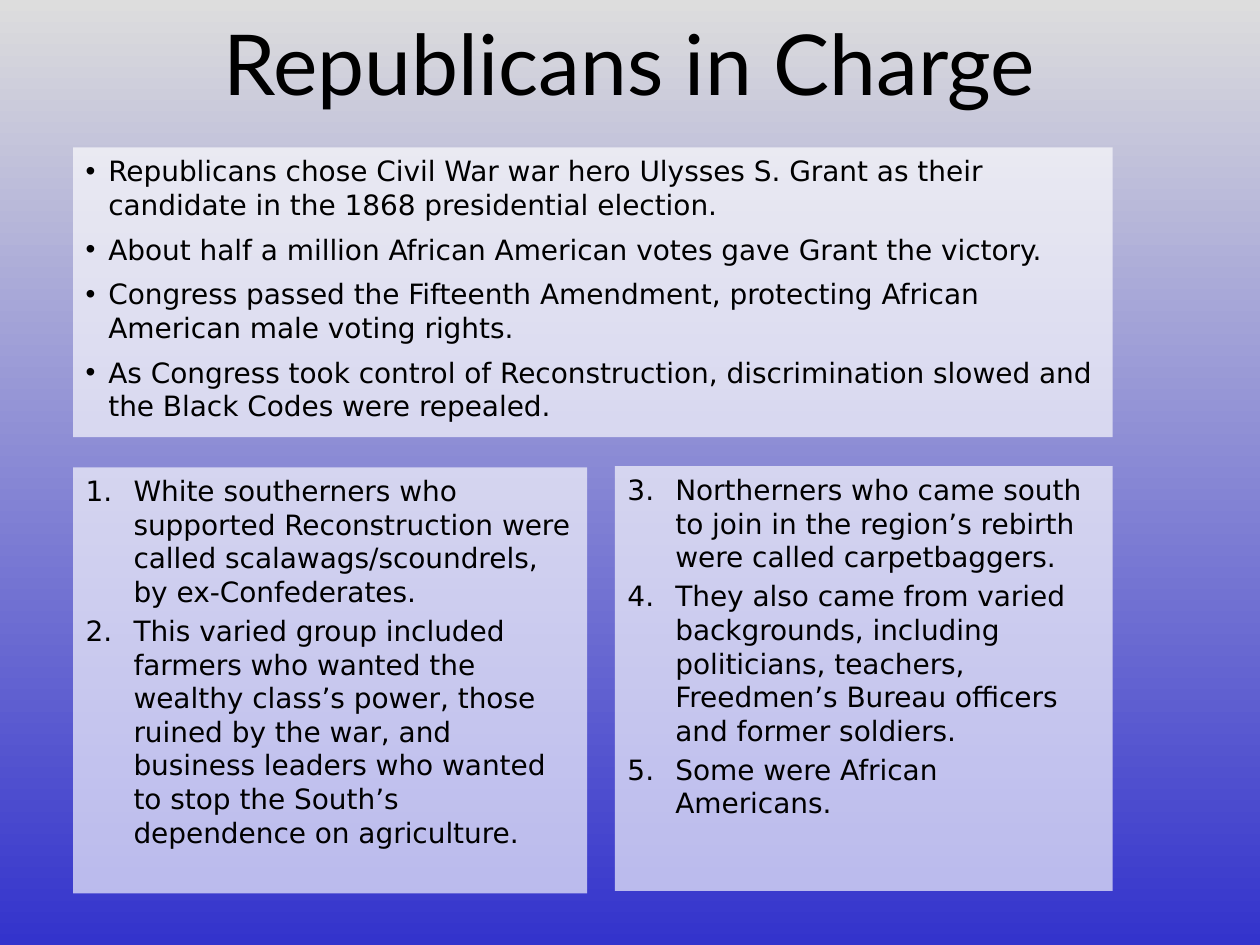
from lxml import etree
from pptx import Presentation
from pptx import util as u
from pptx.dml.color import RGBColor
from pptx.enum import text
from pptx.oxml import ns


def color(value):
    return RGBColor.from_string(value)


class SlideBuilder:
    ink = "000000"
    panel_fill = "FFFFFF"
    panel_opacity = 65
    title_font, title_size = "Lato", 48
    body_font, body_size = "DejaVu Sans", 16

    def __init__(self, slide):
        self.slide = slide

    def background(self, top, bottom):
        fill = self.slide.background.fill
        fill.gradient()
        fill.gradient_angle = 270
        for stop, value, position in zip(fill.gradient_stops, (top, bottom), (0, 1)):
            stop.color.rgb = color(value)
            stop.position = position

    def place(self, shape, box):
        shape.left, shape.top, shape.width, shape.height = map(u.Inches, box)

    def add_run(self, paragraph, words, font, size):
        run = paragraph.add_run()
        run.text = words
        run.font.name = font
        run.font.size = u.Pt(size)
        run.font.bold = False
        run.font.color.rgb = color(self.ink)

    def title(self, words, box):
        shape = self.slide.shapes.title
        self.place(shape, box)
        frame = shape.text_frame
        frame.auto_size = text.MSO_AUTO_SIZE.NONE
        frame.vertical_anchor = text.MSO_ANCHOR.MIDDLE
        paragraph = frame.paragraphs[0]
        paragraph.alignment = text.PP_ALIGN.CENTER
        self.add_run(paragraph, words, self.title_font, self.title_size)

    def panel(self, index, box, items, indent, gap, start=None):
        shape = self.slide.placeholders[index]
        self.place(shape, box)
        shape.fill.solid()
        shape.fill.fore_color.rgb = color(self.panel_fill)
        rgb = next(shape.fill._xPr.iter(ns.qn("a:srgbClr")))
        etree.SubElement(rgb, ns.qn("a:alpha"), val=str(self.panel_opacity * 1000))
        frame = shape.text_frame
        frame.word_wrap = True
        frame.auto_size = text.MSO_AUTO_SIZE.NONE
        frame.vertical_anchor = text.MSO_ANCHOR.TOP
        for number, words in enumerate(items):
            paragraph = frame.add_paragraph() if number else frame.paragraphs[0]
            paragraph.space_before = u.Pt(self.body_size * gap if number else 0)
            self.marker(paragraph, indent, start)
            self.add_run(paragraph, words, self.body_font, self.body_size)

    def marker(self, paragraph, indent, start):
        properties = paragraph._p.get_or_add_pPr()
        properties.set("marL", str(u.Inches(indent)))
        properties.set("indent", str(-u.Inches(indent)))
        if start is None:
            etree.SubElement(properties, ns.qn("a:buChar"), char="•")
        else:
            etree.SubElement(properties, ns.qn("a:buAutoNum"),
                             type="arabicPeriod", startAt=str(start))

    def remove(self, index):
        element = self.slide.placeholders[index]._element
        element.getparent().remove(element)


def main():
    presentation = Presentation()
    presentation.slide_width = u.Inches(10)
    presentation.slide_height = u.Inches(7.5)
    comparison = presentation.slide_layouts[4]
    builder = SlideBuilder(presentation.slides.add_slide(comparison))

    builder.background("DDDDDD", "3333CC")
    builder.title("Republicans in Charge", (0.58, 0.08, 8.83, 0.83))
    builder.panel(1, (0.58, 1.17, 8.25, 2.3), [
        "Republicans chose Civil War war hero Ulysses S. Grant as their "
        "candidate in the 1868 presidential election.",
        "About half a million African American votes gave Grant the victory.",
        "Congress passed the Fifteenth Amendment, protecting African "
        "American male voting rights.",
        "As Congress took control of Reconstruction, discrimination slowed "
        "and the Black Codes were repealed.",
    ], indent=0.18, gap=0.4)
    builder.panel(2, (0.58, 3.71, 4.08, 3.38), [
        "White southerners who supported Reconstruction were called "
        "scalawags/scoundrels, by ex-Confederates.",
        "This varied group included farmers who wanted the wealthy class’s "
        "power, those ruined by the war, and business leaders who wanted to "
        "stop the South’s dependence on agriculture.",
    ], indent=0.38, gap=0.2, start=1)
    builder.panel(4, (4.88, 3.7, 3.95, 3.37), [
        "Northerners who came south to join in the region’s rebirth were "
        "called carpetbaggers.",
        "They also came from varied backgrounds, including politicians, "
        "teachers, Freedmen’s Bureau officers and former soldiers.",
        "Some were African Americans.",
    ], indent=0.38, gap=0.2, start=3)
    builder.remove(3)

    presentation.save("out.pptx")


if __name__ == "__main__":
    main()
